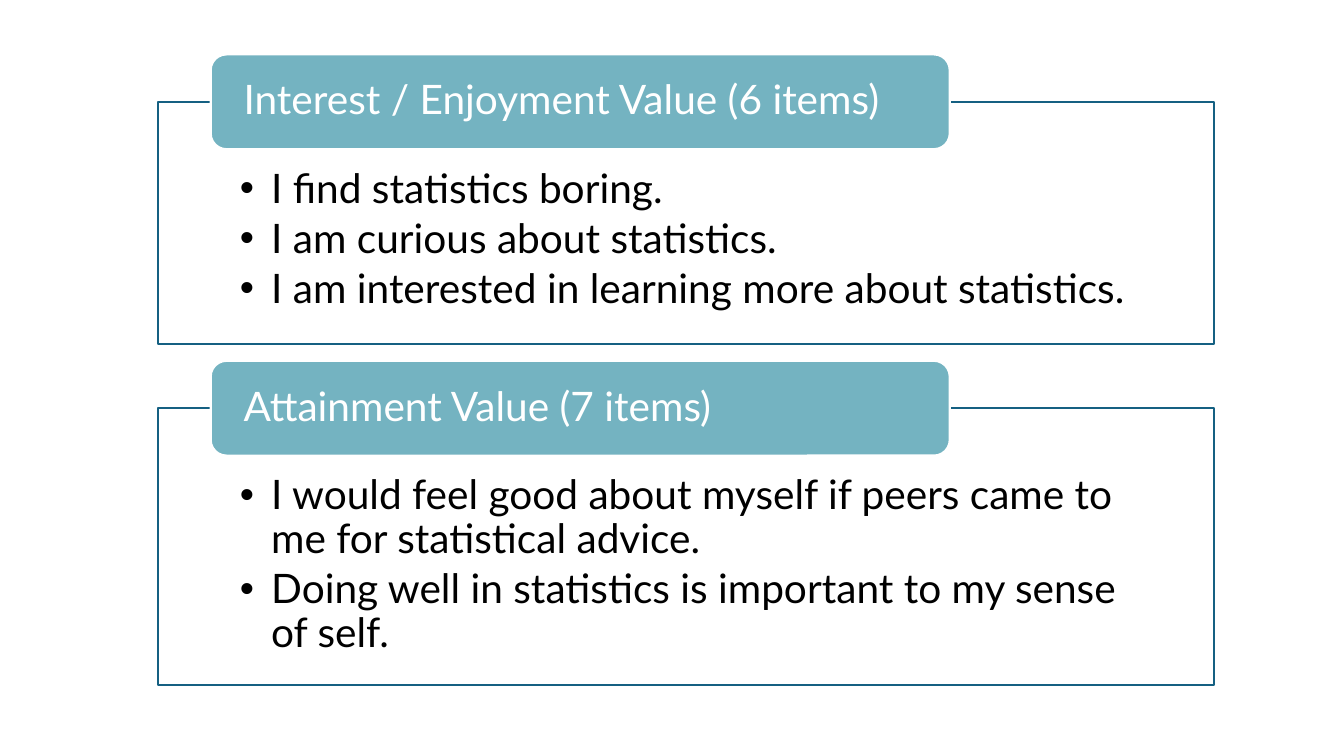
from lxml.etree import SubElement
from pptx import Presentation
from pptx.dml.color import RGBColor
from pptx.enum.shapes import MSO_SHAPE as Preset
from pptx.enum.text import MSO_ANCHOR as Anchor, PP_ALIGN as Align
from pptx.oxml.ns import qn
from pptx.util import Inches, Pt

COLORS = {"white": "FFFFFF", "teal": "74B3C1", "navy": "156082", "black": "000000"}
FONT = {"name": "Lato", "size": Pt(29)}

# heading, bulleted items, height of the frame
SCALES = [
    ("Interest / Enjoyment Value (6 items)",
     ["I find statistics boring.",
      "I am curious about statistics.",
      "I am interested in learning more about statistics."], 2.4),
    ("Attainment Value (7 items)",
     ["I would feel good about myself if peers came to me for statistical advice.",
      "Doing well in statistics is important to my sense of self."], 2.75),
]

FRAME_LEFT, FRAME_TOP, FRAME_WIDTH = 1.57, 1.01, 10.47
FRAME_GAP = 0.64
HEADING_LEFT, HEADING_WIDTH, HEADING_HEIGHT = 2.09, 7.33, 0.94
HEADING_RISE = HEADING_HEIGHT / 2
BULLET_INDENT = 0.31

FRAME_STYLE = {"fill": "white", "line": "navy", "text": "black",
               "anchor": Anchor.TOP, "insets": (0.81, 0.66, 0.81, 0.23)}
HEADING_STYLE = {"fill": "teal", "line": "white", "text": "white",
                 "anchor": Anchor.MIDDLE, "insets": (0.28, 0, 0.28, 0)}


def color(name):
    return RGBColor.from_string(COLORS[name])


def add_bullet(paragraph):
    properties = paragraph._p.get_or_add_pPr()
    indent = Inches(BULLET_INDENT)
    properties.set("marL", str(indent))
    properties.set("indent", str(-indent))
    SubElement(properties, qn("a:buFont")).set("typeface", "Arial")
    SubElement(properties, qn("a:buChar")).set("char", "•")


def add_box(slide, preset, place, lines, style, bulleted=False):
    shape = slide.shapes.add_shape(preset, *map(Inches, place))
    shape.shadow.inherit = False
    shape.fill.solid()
    shape.fill.fore_color.rgb = color(style["fill"])
    shape.line.color.rgb = color(style["line"])
    shape.line.width = Pt(1.5)

    frame = shape.text_frame
    frame.word_wrap = True
    frame.vertical_anchor = style["anchor"]
    for side, inset in zip(("left", "top", "right", "bottom"), style["insets"]):
        setattr(frame, f"margin_{side}", Inches(inset))

    spacing = {"alignment": Align.LEFT, "line_spacing": 0.9,
               "space_after": Pt(4.4 if bulleted else 0)}
    for number, line in enumerate(lines):
        paragraph = frame.add_paragraph() if number else frame.paragraphs[0]
        for name, value in spacing.items():
            setattr(paragraph, name, value)
        if bulleted:
            add_bullet(paragraph)
        run = paragraph.add_run()
        run.text = line
        for name, value in FONT.items():
            setattr(run.font, name, value)
        run.font.color.rgb = color(style["text"])


def main():
    presentation = Presentation()
    presentation.slide_width = Inches(13.33)
    presentation.slide_height = Inches(7.5)
    slide = presentation.slides.add_slide(presentation.slide_layouts[6])

    top = FRAME_TOP
    for heading, items, height in SCALES:
        add_box(slide, Preset.RECTANGLE, (FRAME_LEFT, top, FRAME_WIDTH, height),
                items, FRAME_STYLE, bulleted=True)
        add_box(slide, Preset.ROUNDED_RECTANGLE,
                (HEADING_LEFT, top - HEADING_RISE, HEADING_WIDTH, HEADING_HEIGHT),
                [heading], HEADING_STYLE)
        top += height + FRAME_GAP

    presentation.save("out.pptx")


if __name__ == "__main__":
    main()
